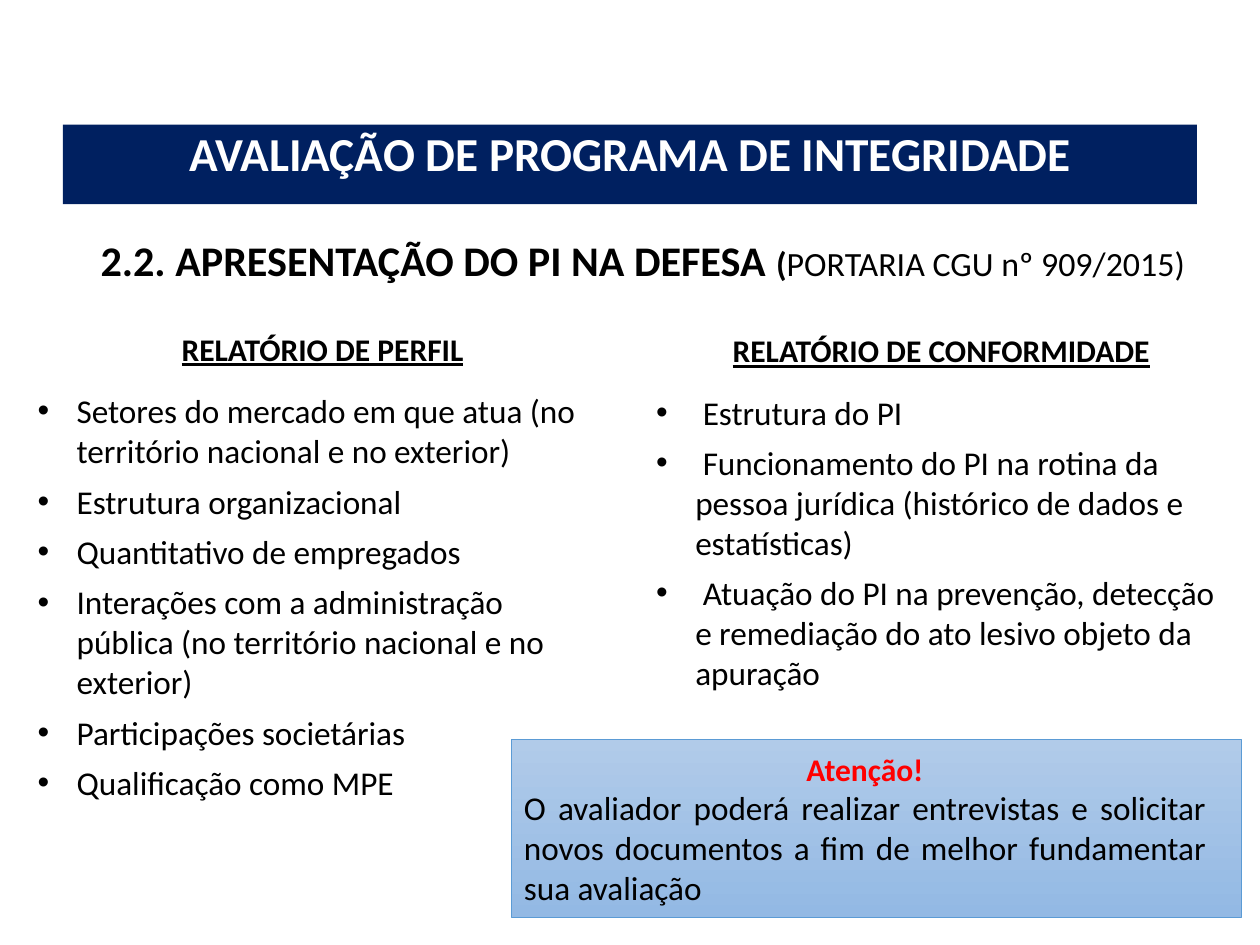
from pptx import Presentation
from pptx.dml.color import RGBColor
from pptx.enum.shapes import MSO_SHAPE
from pptx.enum.text import MSO_ANCHOR, PP_ALIGN
from pptx.oxml.ns import qn
from pptx.util import Inches, Pt
from lxml import etree

RECT = MSO_SHAPE.RECTANGLE
TOP, MIDDLE = MSO_ANCHOR.TOP, MSO_ANCHOR.MIDDLE
CENTER, JUSTIFY = PP_ALIGN.CENTER, PP_ALIGN.JUSTIFY

COLORS = {
    "navy": "002060", "white": "FFFFFF", "black": "000000", "red": "FF0000",
    "light": "B1CBE9", "deep": "93B9E4", "edge": "5B9BD5",
}

PROFILE = [
    "Setores do mercado em que atua (no território nacional e no exterior)",
    "Estrutura organizacional",
    "Quantitativo de empregados",
    "Interações com a administração pública (no território nacional e no exterior)",
    "Participações societárias",
    "Qualificação como MPE",
]
CONFORM = [
    " Estrutura do PI",
    " Funcionamento do PI na rotina da pessoa jurídica (histórico de dados e estatísticas)",
    " Atuação do PI na prevenção, detecção e remediação do ato lesivo objeto da apuração",
]


def color(name):
    return RGBColor.from_string(COLORS[name])


def style(run, size, hue="black", bold=False, under=False):
    font = run.font
    font.name, font.size = "Calibri", Pt(size)
    font.bold, font.underline = bold, under
    font.color.rgb = color(hue)


def indent(par, left, first):
    props = par._p.get_or_add_pPr()
    props.set("marL", str(Inches(left)))
    props.set("indent", str(Inches(first)))
    return props


def add_text(slide, box):
    frame = slide.shapes.add_textbox(*map(Inches, box)).text_frame
    frame.word_wrap = True
    return frame


def add_rect(slide, box, anchor):
    shape = slide.shapes.add_shape(RECT, *map(Inches, box))
    shape.shadow.inherit = False
    shape.text_frame.word_wrap = True
    shape.text_frame.vertical_anchor = anchor
    return shape


def add_title(slide, box):
    bar = add_rect(slide, box, TOP)
    bar.fill.solid()
    bar.fill.fore_color.rgb = color("navy")
    bar.line.fill.background()
    par = bar.text_frame.paragraphs[0]
    par.text = "AVALIAÇÃO DE PROGRAMA DE INTEGRIDADE"
    par.alignment, par.line_spacing = CENTER, 0.9
    style(par.runs[0], 27, "white", True)


def add_topic(slide, box):
    par = add_text(slide, box).paragraphs[0]
    par.alignment, par.line_spacing = JUSTIFY, 0.9
    indent(par, 0.75, -0.25)
    parts = [
        ("2.2. APRESENTAÇÃO DO PI NA DEFESA ", 24.1, True),
        ("(", 19.4, True),
        ("PORTARIA CGU nº 909/2015)", 19.4, False),
    ]
    for text, size, bold in parts:
        run = par.add_run()
        run.text = text
        style(run, size, bold=bold)


def add_report(slide, box, head, items):
    frame = add_text(slide, box)
    par = frame.paragraphs[0]
    par.text = head
    par.alignment, par.space_after = CENTER, Pt(13)
    style(par.runs[0], 18, bold=True, under=True)
    for item in items:
        par = frame.add_paragraph()
        par.text = item
        par.space_after = Pt(6)
        props = indent(par, 0.31, -0.31)
        etree.SubElement(props, qn("a:buFont")).set("typeface", "Arial")
        etree.SubElement(props, qn("a:buChar")).set("char", "•")
        style(par.runs[0], 19)


def add_notice(slide, box):
    card = add_rect(slide, box, MIDDLE)
    card.fill.gradient()
    card.fill.gradient_angle = 270
    for stop, name in zip(card.fill.gradient_stops, ("light", "deep")):
        stop.color.rgb = color(name)
    card.line.color.rgb = color("edge")
    card.line.width = Pt(0.5)
    head = card.text_frame.paragraphs[0]
    head.text = "Atenção!"
    head.alignment = CENTER
    head._p.get_or_add_pPr().set("marR", str(Inches(0.18)))
    style(head.runs[0], 18, "red", True)
    body = card.text_frame.add_paragraph()
    body.text = ("O avaliador poderá realizar entrevistas e solicitar novos "
                 "documentos a fim de melhor fundamentar sua avaliação")
    body.alignment = JUSTIFY
    style(body.runs[0], 19)


def main():
    deck = Presentation()
    deck.slide_width, deck.slide_height = Inches(10), Inches(7.5)
    slide = deck.slides.add_slide(deck.slide_layouts[6])
    add_title(slide, (0.5, 0.99, 9, 0.63))
    add_topic(slide, (0.2, 1.86, 9.36, 0.71))
    add_report(slide, (0.2, 2.57, 4.72, 3.88), "RELATÓRIO DE PERFIL", PROFILE)
    add_report(slide, (5.11, 2.58, 4.72, 3.25), "RELATÓRIO DE CONFORMIDADE", CONFORM)
    add_notice(slide, (4.06, 5.87, 5.79, 1.41))
    deck.save("out.pptx")


if __name__ == "__main__":
    main()
